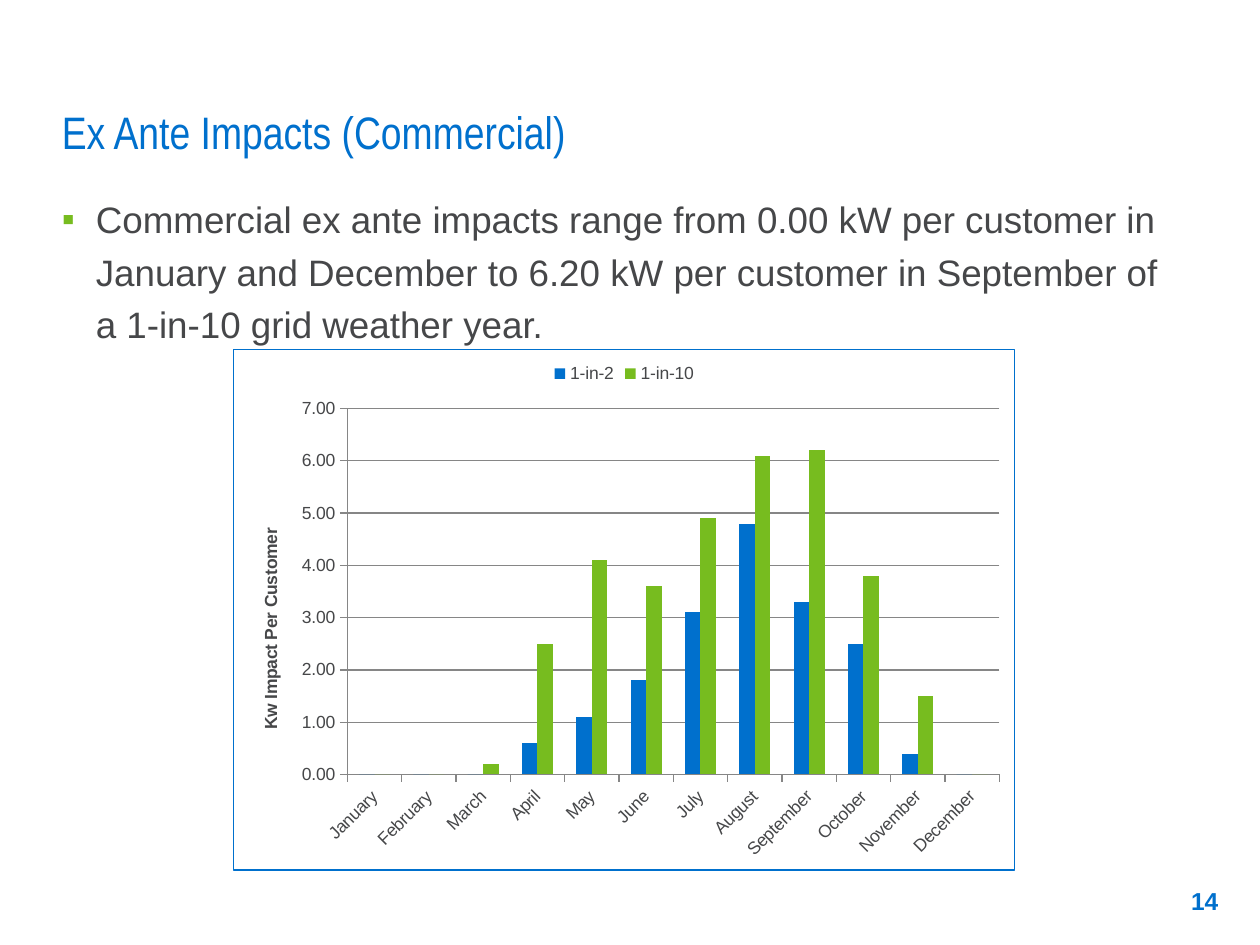
from lxml import etree
from pptx import Presentation
from pptx.chart.data import CategoryChartData
from pptx.dml.color import RGBColor
from pptx.enum.chart import XL_CHART_TYPE as Chart, XL_LEGEND_POSITION as Legend, XL_TICK_MARK as Tick
from pptx.enum.text import MSO_ANCHOR as Anchor, PP_ALIGN as Align
from pptx.oxml import parse_xml
from pptx.oxml.ns import nsdecls, qn
from pptx.util import Inches, Pt

BLUE = RGBColor(0x00, 0x70, 0xCD)
GREEN = RGBColor(0x77, 0xBC, 0x1F)
TEXT = RGBColor(0x46, 0x47, 0x49)
GRID = RGBColor(0x86, 0x86, 0x86)

MONTHS = ["January", "February", "March", "April", "May", "June", "July",
          "August", "September", "October", "November", "December"]
SERIES = {
    "1-in-2": (BLUE, [0, 0, 0, 0.6, 1.1, 1.8, 3.1, 4.8, 3.3, 2.5, 0.4, 0]),
    "1-in-10": (GREEN, [0, 0, 0.2, 2.5, 4.1, 3.6, 4.9, 6.1, 6.2, 3.8, 1.5, 0]),
}


def apply(target, values):
    for name, value in values.items():
        setattr(target, name, value)


class Deck:
    fonts = {
        "title": {"name": "Arial Narrow", "size": Pt(26), "color": BLUE},
        "body": {"name": "Arial", "size": Pt(21), "color": TEXT},
        "number": {"name": "Arial", "size": Pt(14), "bold": True, "color": BLUE},
        "chart": {"name": "Arial", "size": Pt(10), "color": TEXT},
        "axis_title": {"name": "Arial", "size": Pt(10), "bold": True, "color": TEXT},
    }

    def __init__(self):
        self.prs = Presentation()
        apply(self.prs, {"slide_width": Inches(10), "slide_height": Inches(7.5)})
        self.s = self.prs.slides.add_slide(self.prs.slide_layouts[5])

    def font(self, font, style):
        values = dict(self.fonts[style])
        font.color.rgb = values.pop("color")
        apply(font, values)

    def fill_text(self, sp, text, style, align, anchor, sides):
        tf = sp.text_frame
        apply(tf, {"word_wrap": True, "vertical_anchor": anchor,
                   "margin_left": Inches(sides[0]), "margin_right": Inches(sides[1]),
                   "margin_top": Inches(0.05), "margin_bottom": Inches(0.05)})
        p = tf.paragraphs[0]
        p.alignment = align
        r = p.add_run()
        r.text = text
        self.font(r.font, style)
        return p

    def title(self, text, x, y, w, h):
        sp = self.s.shapes.title
        apply(sp, {"left": Inches(x), "top": Inches(y),
                   "width": Inches(w), "height": Inches(h)})
        self.fill_text(sp, text, "title", Align.LEFT, Anchor.BOTTOM, (0, 0.1))

    def text(self, text, x, y, w, h, style, align=Align.LEFT, anchor=Anchor.TOP,
             sides=(0, 0.1)):
        sp = self.s.shapes.add_textbox(Inches(x), Inches(y), Inches(w), Inches(h))
        return self.fill_text(sp, text, style, align, anchor, sides)

    def bullet(self, text, x, y, w, h):
        p = self.text(text, x, y, w, h, "body")
        pPr = p._p.get_or_add_pPr()
        pPr.set("marL", str(Inches(0.27)))
        pPr.set("indent", str(-Inches(0.27)))
        color = etree.SubElement(pPr, qn("a:buClr"))
        etree.SubElement(color, qn("a:srgbClr"), val=str(GREEN))
        etree.SubElement(pPr, qn("a:buFont"), typeface="Arial")
        etree.SubElement(pPr, qn("a:buChar"), char="▪")
        apply(p, {"line_spacing": 1.2, "space_after": Pt(2.6)})

    def column_chart(self, categories, series, axis_title, x, y, w, h):
        data = CategoryChartData(number_format="0.00")
        data.categories = categories
        for name, (_, values) in series.items():
            data.add_series(name, values)
        chart = self.s.shapes.add_chart(
            Chart.COLUMN_CLUSTERED, Inches(x), Inches(y), Inches(w), Inches(h), data).chart
        self.font(chart.font, "chart")
        apply(chart, {"has_title": False, "has_legend": True})
        apply(chart.legend, {"position": Legend.TOP, "include_in_layout": False})
        plot = chart.plots[0]
        apply(plot, {"gap_width": 150, "overlap": 0, "vary_by_categories": False})
        for bars, (color, _) in zip(plot.series, series.values()):
            bars.invert_if_negative = False
            bars.format.fill.solid()
            bars.format.fill.fore_color.rgb = color

        cat, val = chart.category_axis, chart.value_axis
        apply(val, {"minimum_scale": 0, "maximum_scale": 7, "major_unit": 1,
                    "has_major_gridlines": True})
        apply(val.tick_labels, {"number_format": "0.00", "number_format_is_linked": False})
        for axis in (cat, val):
            axis.major_tick_mark = Tick.OUTSIDE
            self.font(axis.tick_labels.font, "chart")
        for line in (cat.format.line, val.format.line, val.major_gridlines.format.line):
            line.color.rgb = GRID
            line.width = Pt(0.75)
        cat._element.find(qn("c:txPr")).find(qn("a:bodyPr")).set("rot", "-2700000")

        r = val.axis_title.text_frame.paragraphs[0].add_run()
        r.text = axis_title
        self.font(r.font, "axis_title")
        self.chart_border(chart)

    def chart_border(self, chart):
        frame = parse_xml(
            f'<c:spPr {nsdecls("c", "a")}><a:noFill/><a:ln w="{Pt(0.75)}">'
            f'<a:solidFill><a:srgbClr val="{BLUE}"/></a:solidFill></a:ln></c:spPr>')
        chart._chartSpace.find(qn("c:chart")).addnext(frame)


def main():
    deck = Deck()
    deck.title("Ex Ante Impacts (Commercial)", 0.49, 0.57, 9.01, 0.74)
    deck.bullet("Commercial ex ante impacts range from 0.00 kW per customer in January "
                "and December to 6.20 kW per customer in September of a 1-in-10 grid "
                "weather year.", 0.49, 1.44, 9.01, 5.26)
    deck.text("14", 9.06, 6.95, 0.7, 0.4, "number", Align.RIGHT, Anchor.MIDDLE, (0.09, 0.09))
    deck.column_chart(MONTHS, SERIES, "Kw Impact Per Customer", 1.85, 2.77, 6.21, 4.14)
    deck.prs.save("out.pptx")


if __name__ == "__main__":
    main()
